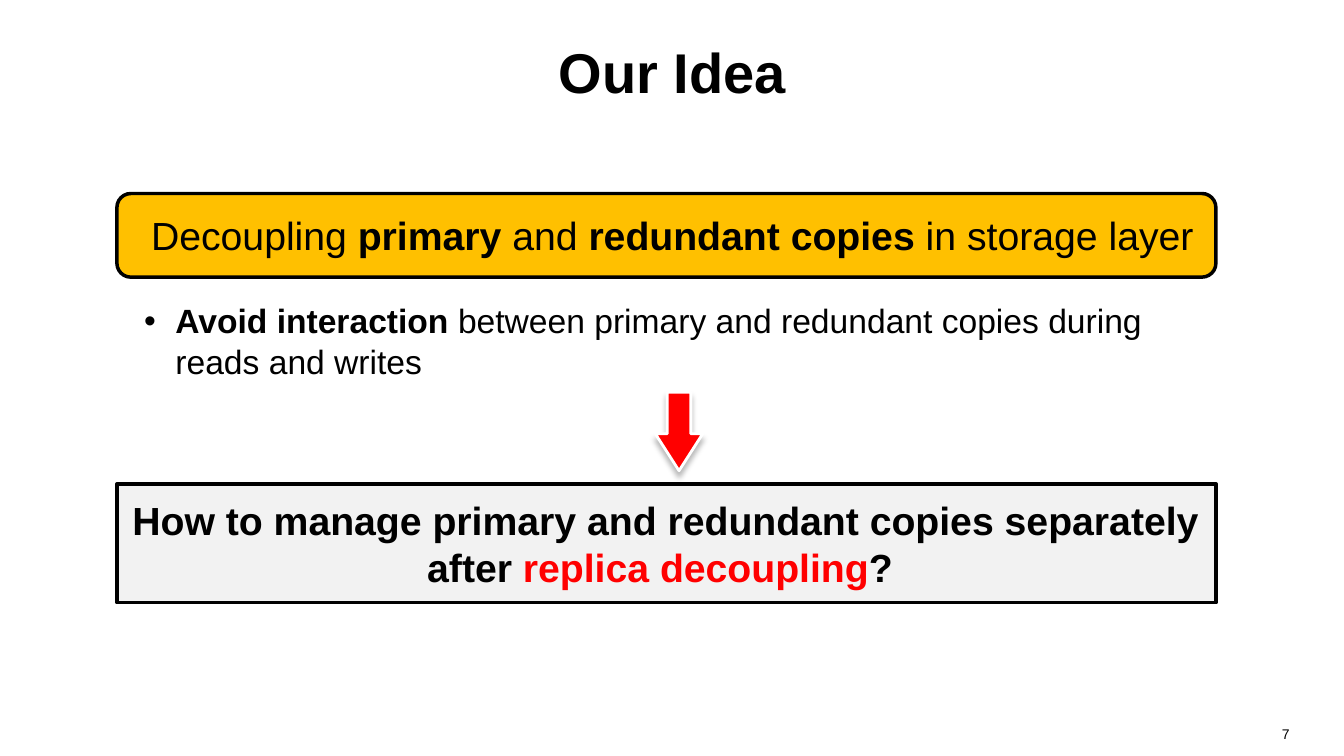
"""Builds the "Our Idea" slide on decoupling primary and redundant copies."""
from lxml import etree
from pptx import Presentation
from pptx import util as u
from pptx.dml.color import RGBColor
from pptx.enum import shapes, text
from pptx.oxml.ns import qn

COLORS = {"black": "000000", "white": "FFFFFF", "red": "FF0000",
          "gold": "FFC000", "grey": "F2F2F2"}
ALIGN = text.PP_ALIGN
SHAPE = shapes.MSO_SHAPE


class SlideBuilder:
    """Holds the style and the current slide."""

    def __init__(self, presentation, font="Arial"):
        """Add a title-and-content slide."""
        self.font = font
        self.slide = presentation.slides.add_slide(presentation.slide_layouts[1])

    def color(self, name):
        """Return the named colour."""
        return RGBColor.from_string(COLORS[name])

    def place(self, shape, box):
        """Move and size a shape to a box in inches."""
        shape.left, shape.top, shape.width, shape.height = map(u.Inches, box)

    def add_runs(self, shape, runs, size, align=ALIGN.LEFT, anchor=text.MSO_ANCHOR.TOP):
        """Fill a shape with one paragraph of (text, bold, colour) runs."""
        frame = shape.text_frame
        frame.word_wrap = True
        frame.auto_size = text.MSO_AUTO_SIZE.NONE
        frame.vertical_anchor = anchor
        paragraph = frame.paragraphs[0]
        paragraph.alignment = align
        for content, bold, color in runs:
            run = paragraph.add_run()
            run.text = content
            run.font.name = self.font
            run.font.size = u.Pt(size)
            run.font.bold = bold
            run.font.color.rgb = self.color(color)
        return paragraph

    def title(self, content, box):
        """Fill the title placeholder."""
        shape = self.slide.shapes.title
        self.place(shape, box)
        self.add_runs(shape, [(content, True, "black")], 40, ALIGN.CENTER,
                      text.MSO_ANCHOR.MIDDLE)

    def bullet(self, runs, box):
        """Put one second-level bullet in the body placeholder."""
        shape = self.slide.placeholders[1]
        self.place(shape, box)
        paragraph = self.add_runs(shape, runs, 24)
        paragraph.level = 1
        paragraph.space_before = u.Pt(4.8)
        properties = paragraph._p.get_or_add_pPr()
        properties.set("marL", str(u.Inches(0.81)))
        properties.set("indent", str(u.Inches(-0.31)))
        etree.SubElement(properties, qn("a:buFont")).set("typeface", self.font)
        etree.SubElement(properties, qn("a:buChar")).set("char", "•")

    def text_box(self, runs, box, size, align=ALIGN.LEFT):
        """Add a text box."""
        shape = self.slide.shapes.add_textbox(*map(u.Inches, box))
        self.add_runs(shape, runs, size, align)

    def panel(self, kind, box, fill, line="black", width=2.5):
        """Add a filled, outlined preset shape."""
        shape = self.slide.shapes.add_shape(kind, *map(u.Inches, box))
        shape.shadow.inherit = False
        shape.fill.solid()
        shape.fill.fore_color.rgb = self.color(fill)
        shape.line.color.rgb = self.color(line)
        shape.line.width = u.Pt(width)
        return shape

    def arrow(self, box):
        """Add a red down arrow with a soft shadow below it."""
        shape = self.panel(SHAPE.DOWN_ARROW, box, "red", "white", 2)
        shape.adjustments[1] = 0.78
        effects = shape._element.spPr.find(qn("a:effectLst"))
        shadow = etree.SubElement(effects, qn("a:outerShdw"), blurRad=str(u.Pt(4)),
                                  dist=str(u.Pt(4)), dir="5400000", rotWithShape="0")
        tint = etree.SubElement(shadow, qn("a:srgbClr"), val=COLORS["black"])
        etree.SubElement(tint, qn("a:alpha"), val="28000")


def main():
    """Build and save the slide."""
    presentation = Presentation()
    presentation.slide_width = u.Inches(13.33)
    presentation.slide_height = u.Inches(7.5)
    builder = SlideBuilder(presentation)

    builder.title("Our Idea", (0.67, 0.08, 12, 1.25))
    builder.bullet([("Avoid interaction ", True, "black"),
                    ("between primary and redundant copies during reads and writes",
                     False, "black")], (0.83, 2.93, 11.08, 1.07))

    builder.panel(SHAPE.ROUNDED_RECTANGLE, (1.16, 1.92, 10.9, 0.83), "gold")
    builder.text_box([("Decoupling ", False, "black"), ("primary", True, "black"),
                      (" and ", False, "black"), ("redundant copies ", True, "black"),
                      ("in storage layer", False, "black")],
                     (1.4, 2.05, 10.67, 0.57), 28)

    builder.arrow((6.5, 3.89, 0.47, 0.78))
    builder.panel(SHAPE.RECTANGLE, (1.16, 4.8, 10.9, 1.18), "grey")
    builder.text_box([("How to manage primary and redundant copies separately after ",
                       True, "black"),
                      ("replica decoupling", True, "red"), ("? ", True, "black")],
                     (1.16, 4.87, 10.88, 1.04), 28, ALIGN.CENTER)
    builder.text_box([("7", False, "black")], (9.78, 7.15, 3.11, 0.35), 10, ALIGN.RIGHT)

    presentation.save("out.pptx")


if __name__ == "__main__":
    main()
